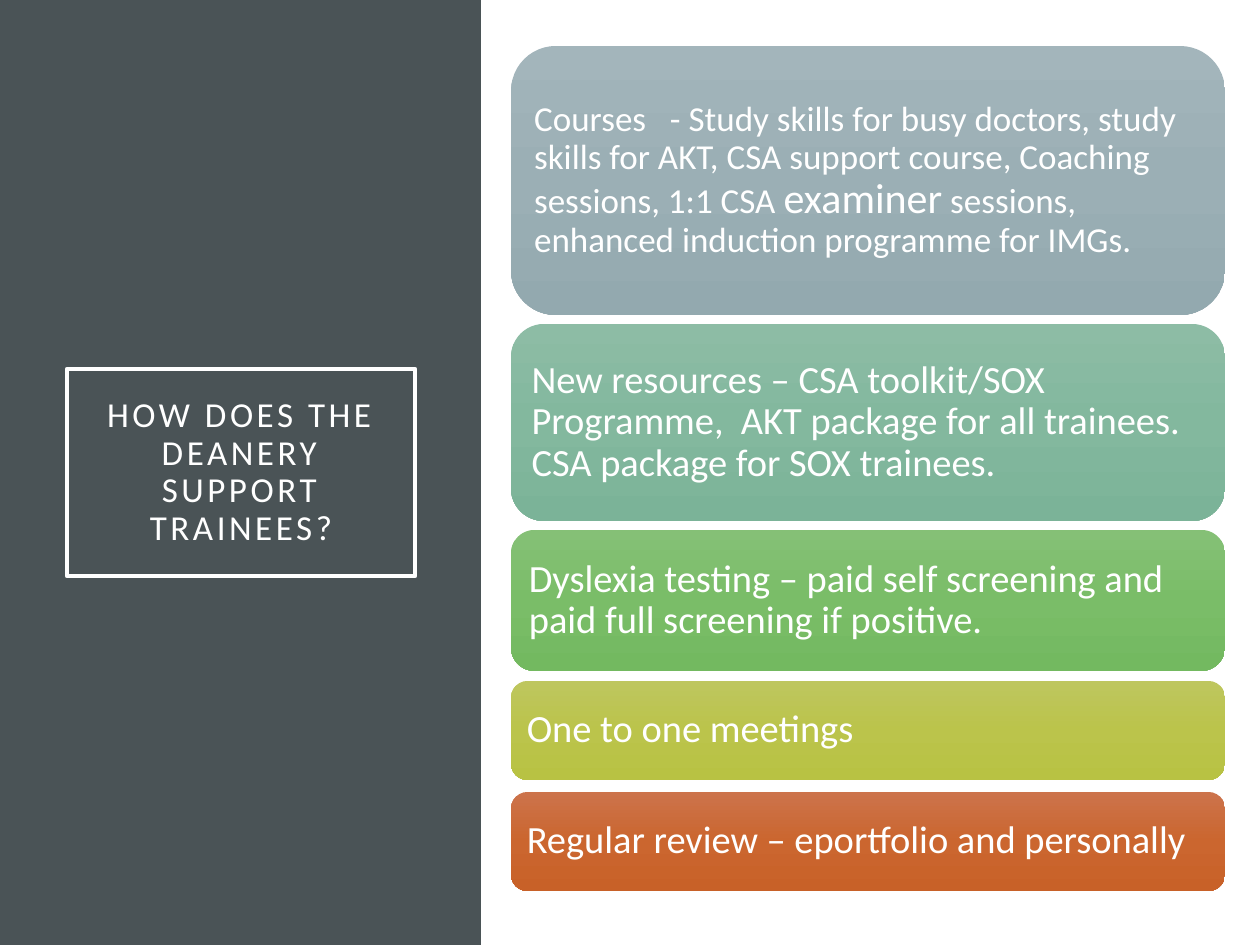
from copy import deepcopy

from pptx import Presentation
from pptx.dml.color import RGBColor
from pptx.enum.shapes import MSO_SHAPE
from pptx.enum.text import MSO_ANCHOR, PP_ALIGN
from pptx.util import Emu, Pt

RECTANGLE = MSO_SHAPE.RECTANGLE
ROUNDED = MSO_SHAPE.ROUNDED_RECTANGLE
MIDDLE = MSO_ANCHOR.MIDDLE
LEFT, CENTER = PP_ALIGN.LEFT, PP_ALIGN.CENTER

PX_PER_INCH = 126
FONT = "Calibri"
COLORS = {
    "sidebar": "4A5356",
    "white": "FFFFFF",
    "courses": ("A3B5BB", "9BAFB5", "93A9AF"),
    "resources": ("8DBCA5", "83B89E", "7BB398"),
    "dyslexia": ("85C076", "7ABD68", "73B960"),
    "meetings": ("BEC65E", "BBC44B", "B8C243"),
    "review": ("CC734B", "CB662F", "C86128"),
}

# Each card: colour key, top, height, inset, text runs with their sizes
CARDS = [
    ("courses", 46, 269, 10, [
        ("Courses   - Study skills for busy doctors, study skills for AKT, "
         "CSA support course, Coaching sessions, 1:1 CSA ", 20),
        ("examiner", 24),
        (" sessions,  enhanced induction programme for IMGs.", 20)]),
    ("resources", 324, 197, 11, [
        ("New resources – CSA toolkit/SOX Programme,  AKT package for all "
         "trainees. CSA package for SOX trainees.", 22)]),
    ("dyslexia", 530, 141, 11, [
        ("Dyslexia testing – paid self screening and paid full screening "
         "if positive.", 22)]),
    ("meetings", 681, 99, 11, [("One to one meetings", 22)]),
    ("review", 792, 99, 11, [
        ("Regular review – eportfolio and personally", 22)]),
]


def px(length):
    return Emu(round(length * 914400 / PX_PER_INCH))


def rgb(value):
    return RGBColor.from_string(value)


def add_box(slide, kind, left, top, width, height):
    shape = slide.shapes.add_shape(kind, px(left), px(top), px(width), px(height))
    shape.shadow.inherit = False
    shape.line.fill.background()
    return shape


def fill_gradient(shape, colors):
    """Fill from top to bottom with evenly spaced colours."""
    shape.fill.gradient()
    shape.fill.gradient_angle = 270
    first = shape.fill.gradient_stops[0]._gs
    for _ in colors[2:]:
        first.addnext(deepcopy(first))
    for index, (stop, color) in enumerate(zip(shape.fill.gradient_stops, colors)):
        stop.position = index / (len(colors) - 1)
        stop.color.rgb = rgb(color)


def write_text(shape, runs, inset, alignment):
    frame = shape.text_frame
    frame.word_wrap = True
    frame.vertical_anchor = MIDDLE
    frame.margin_left = frame.margin_right = px(inset)
    frame.margin_top = frame.margin_bottom = px(inset)
    paragraph = frame.paragraphs[0]
    paragraph.alignment = alignment
    paragraph.line_spacing = 0.9
    paragraph.font.name = FONT
    paragraph.font.color.rgb = rgb(COLORS["white"])
    for text, size in runs:
        run = paragraph.add_run()
        run.text = text
        run.font.name = FONT
        run.font.size = Pt(size)
        run.font.color.rgb = rgb(COLORS["white"])
    return paragraph


def add_sidebar(slide, left, top, width, height):
    # Dark panel
    panel = add_box(slide, RECTANGLE, left, top, width, height)
    panel.fill.solid()
    panel.fill.fore_color.rgb = rgb(COLORS["sidebar"])

    # Framed title
    title = add_box(slide, RECTANGLE, left + 67, top + 369, 348, 207)
    title.fill.background()
    title.line.color.rgb = rgb(COLORS["white"])
    title.line.width = Pt(2.5)
    paragraph = write_text(
        title, [("HOW DOES THE DEANERY SUPPORT TRAINEES?", 20)], 25, CENTER)
    for run in paragraph.runs:
        run.font._element.set("spc", "200")


def add_cards(slide, left, top, width):
    for key, card_top, height, inset, runs in CARDS:
        card = add_box(slide, ROUNDED, left, top + card_top, width, height)
        fill_gradient(card, COLORS[key])
        write_text(card, runs, inset, LEFT)


def main():
    presentation = Presentation()
    presentation.slide_width = px(1260)
    presentation.slide_height = px(945)
    slide = presentation.slides.add_slide(presentation.slide_layouts[6])
    add_sidebar(slide, 0, 0, 481, 945)
    add_cards(slide, 511, 0, 714)
    presentation.save("out.pptx")


if __name__ == "__main__":
    main()
